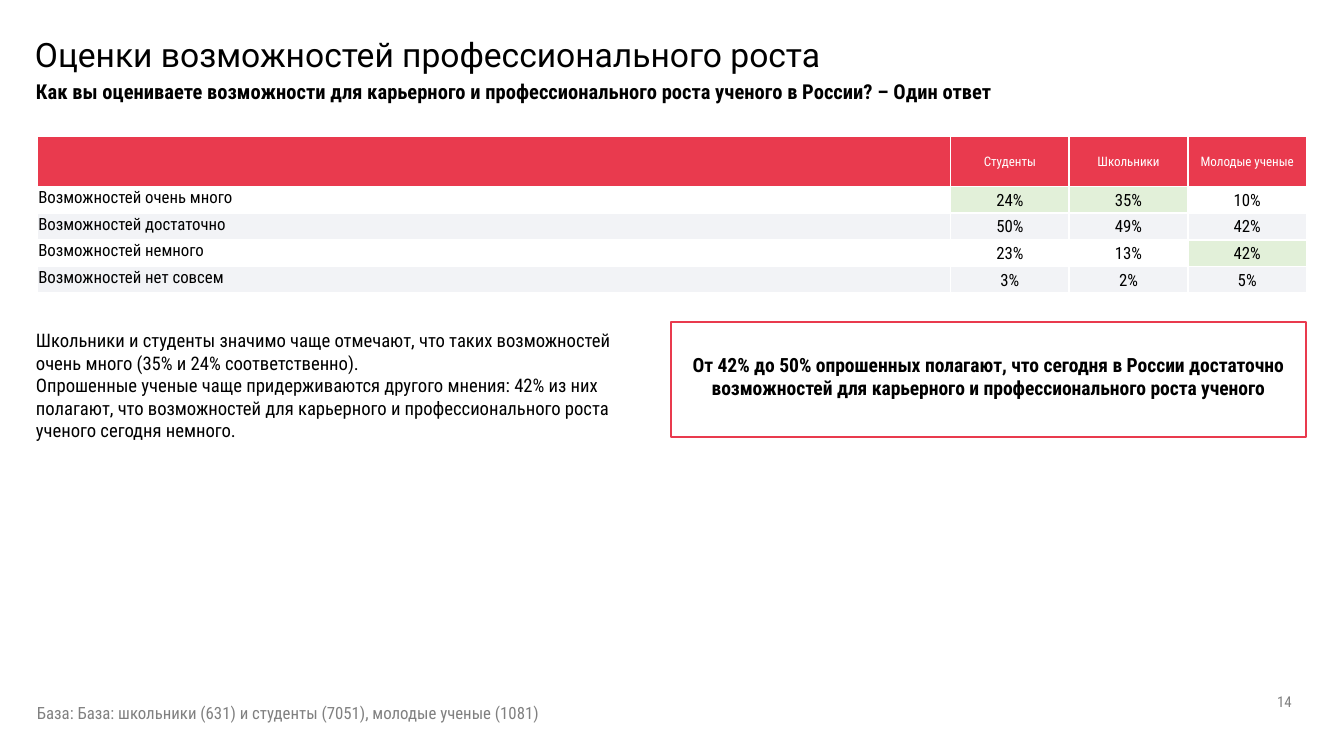
"""Build a survey slide with a results table, comments and a key finding."""
from lxml import etree
from pptx import Presentation
from pptx.dml.color import RGBColor
from pptx.enum import shapes, text
from pptx.oxml import ns
from pptx.util import Pt

RED = RGBColor(0xE9, 0x3A, 0x4E)
GREEN = RGBColor(0xE2, 0xF0, 0xD9)
STRIPE = RGBColor(0xF2, 0xF3, 0xF6)
WHITE = RGBColor(0xFF, 0xFF, 0xFF)
BLACK = RGBColor(0, 0, 0)
GREY = RGBColor(0x80, 0x80, 0x80)
FONT = "Roboto Condensed"
LEFT, CENTER, RIGHT = text.PP_ALIGN.LEFT, text.PP_ALIGN.CENTER, text.PP_ALIGN.RIGHT
TOP, MIDDLE = text.MSO_ANCHOR.TOP, text.MSO_ANCHOR.MIDDLE

HEADS = ["", "Студенты", "Школьники", "Молодые ученые"]
ROWS = [
    ["Возможностей очень много", "24%", "35%", "10%"],
    ["Возможностей достаточно", "50%", "49%", "42%"],
    ["Возможностей немного", "23%", "13%", "42%"],
    ["Возможностей нет совсем", "3%", "2%", "5%"],
]
HIGHLIGHTS = {(1, 1), (1, 2), (3, 3)}
COMMENTS = [
    "Школьники и студенты значимо чаще отмечают, что таких возможностей "
    "очень много (35% и 24% соответственно).",
    "Опрошенные ученые чаще придерживаются другого мнения: 42% из них полагают, "
    "что возможностей для карьерного и профессионального роста ученого сегодня немного.",
]
FINDING = ("От 42% до 50% опрошенных полагают, что сегодня в России достаточно "
           "возможностей для карьерного и профессионального роста ученого")
QUESTION = ("Как вы оцениваете возможности для карьерного и профессионального роста "
            "ученого в России? – Один ответ")
BASE = "База: База: школьники (631) и студенты (7051), молодые ученые (1081)"


def write(tf, *lines, size=10, color=BLACK, bold=False, font=FONT, align=LEFT, spacing=None):
    """Fill a text frame with one formatted paragraph per line."""
    for i, line in enumerate(lines):
        p = tf.add_paragraph() if i else tf.paragraphs[0]
        p.alignment = align
        if spacing:
            p.line_spacing = spacing
        p.font.size = Pt(size)
        r = p.add_run()
        r.text = line
        r.font.size, r.font.bold, r.font.name = Pt(size), bold, font
        r.font.color.rgb = color


def add_text(s, box, *lines, anchor=TOP, inset=3.6, **fmt):
    """Add a wrapping text box with formatted lines."""
    tf = s.shapes.add_textbox(*map(Pt, box)).text_frame
    tf.word_wrap = True
    tf.vertical_anchor = anchor
    tf.margin_top = tf.margin_bottom = Pt(inset)
    write(tf, *lines, **fmt)


def add_heading(s, box):
    """Place the title and the survey question under it."""
    x, y, w, h = box
    sp = s.shapes.title
    sp.left, sp.top, sp.width, sp.height = map(Pt, box)
    tf = sp.text_frame
    tf.word_wrap = True
    tf.auto_size = text.MSO_AUTO_SIZE.NONE
    tf.vertical_anchor = TOP
    tf.margin_top = Pt(9.2)
    write(tf, "Оценки возможностей профессионального роста",
          size=18, font="Roboto", spacing=Pt(20))
    add_text(s, (x + 0.7, y + 24.5, w - 27, 50), QUESTION,
             inset=7.2, size=11, bold=True, spacing=1.02)


def format_cell(cell, line, fill, **fmt):
    """Write a table cell with white borders and a plain fill."""
    cell.margin_left = cell.margin_right = cell.margin_top = Pt(0.7)
    cell.margin_bottom = 0
    tc_pr = cell._tc.get_or_add_tcPr()
    for side in ("a:lnL", "a:lnR", "a:lnT", "a:lnB"):
        ln = etree.SubElement(tc_pr, ns.qn(side), w=str(Pt(1)))
        solid = etree.SubElement(ln, ns.qn("a:solidFill"))
        etree.SubElement(solid, ns.qn("a:srgbClr"), val=str(WHITE))
    cell.fill.solid()
    cell.fill.fore_color.rgb = fill
    write(cell.text_frame, line, **fmt)


def add_results(s, box):
    """Add the table of answers by group, with the highlighted shares."""
    x, y, w, h = box
    head_h, group_w = 27, 63.6
    row_h = (h - head_h) / len(ROWS)
    table = s.shapes.add_table(len(ROWS) + 1, len(HEADS), *map(Pt, box)).table
    for j, column in enumerate(table.columns):
        column.width = Pt(group_w if j else w - group_w * (len(HEADS) - 1))
    for i, values in enumerate([HEADS] + ROWS):
        table.rows[i].height = Pt(row_h if i else head_h)
        for j, value in enumerate(values):
            cell = table.cell(i, j)
            cell.vertical_anchor = MIDDLE if j else TOP
            if i == 0:
                fill = RED
            elif (i, j) in HIGHLIGHTS:
                fill = GREEN
            else:
                fill = WHITE if i % 2 else STRIPE
            format_cell(cell, value, fill, size=9 if i else 7,
                        color=BLACK if i else WHITE, align=CENTER if j else LEFT)


def add_finding(s, box):
    """Add the outlined box with the key finding."""
    x, y, w, h = box
    sp = s.shapes.add_shape(shapes.MSO_SHAPE.RECTANGLE, *map(Pt, box))
    sp.shadow.inherit = False
    sp.fill.background()
    sp.line.color.rgb = RED
    sp.line.width = Pt(1)
    add_text(s, (x, y + 13, w, 32.4), FINDING, size=10.5, bold=True, align=CENTER)


def add_footer(s, box):
    """Add the sample note and the slide number."""
    x, y, w, h = box
    add_text(s, (x, y + 8, 347, 18), BASE, size=9, color=GREY)
    add_text(s, (x + w - 162, y, 162, 21.6), "14",
             anchor=MIDDLE, size=8, color=GREY, align=RIGHT)


def main():
    """Build and save the slide."""
    prs = Presentation()
    prs.slide_width, prs.slide_height = Pt(720), Pt(405)
    s = prs.slides.add_slide(prs.slide_layouts[5])
    add_heading(s, (11.5, 10.8, 620.6, 78.5))
    add_results(s, (19.8, 73, 680.2, 84))
    add_text(s, (12.2, 172.8, 347, 67.7), *COMMENTS)
    add_finding(s, (359.3, 172.5, 340.6, 61.9))
    add_footer(s, (12.7, 365, 686.4, 26))
    prs.save("out.pptx")


if __name__ == "__main__":
    main()
